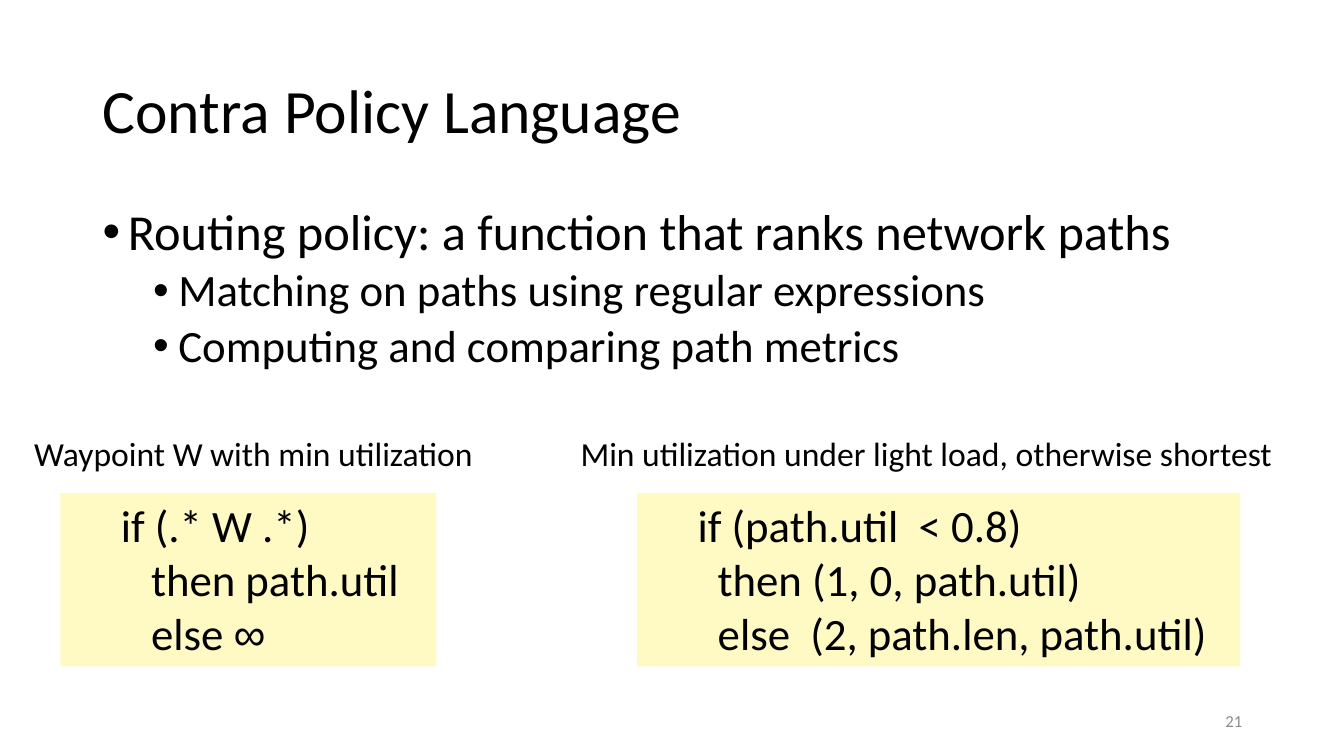
"""Build the slide on the Contra policy language with two example policies."""
from lxml import etree
from pptx import Presentation
from pptx.dml.color import RGBColor
from pptx.enum.shapes import MSO_SHAPE
from pptx.enum.text import MSO_ANCHOR, PP_ALIGN
from pptx.oxml.ns import qn
from pptx.util import Inches, Pt

RECTANGLE = MSO_SHAPE.RECTANGLE
TOP, MIDDLE = MSO_ANCHOR.TOP, MSO_ANCHOR.MIDDLE
LEFT, RIGHT = PP_ALIGN.LEFT, PP_ALIGN.RIGHT
BLACK = RGBColor(0x00, 0x00, 0x00)
GRAY = RGBColor(0x8C, 0x8C, 0x8C)
YELLOW = RGBColor(0xFF, 0xF9, 0xC4)

TITLE = "Contra Policy Language"
BULLETS = [
    (0, "Routing policy: a function that ranks network paths"),
    (1, "Matching on paths using regular expressions"),
    (1, "Computing and comparing path metrics"),
]
PAGE_NUMBER = "21"
POLICIES = [
    {
        "caption": "Waypoint W with min utilization",
        "caption_span": (0.24, 4.6),
        "code_span": (0.6, 3.73),
        "branch_indent": 0.3,
        "code": ["if (.* W .*)", "then path.util", "else ∞"],
    },
    {
        "caption": "Min utilization under light load, otherwise shortest",
        "caption_span": (5.66, 7.13),
        "code_span": (6.32, 5.98),
        "branch_indent": 0.2,
        "code": ["if (path.util  < 0.8)", "then (1, 0, path.util)",
                 "else  (2, path.len, path.util)"],
    },
]
CAPTION_TOP, CAPTION_HEIGHT = 4.25, 0.5
CODE_TOP, CODE_HEIGHT, CODE_INDENT = 4.89, 1.72, 0.5
BULLET_HANG, LEVEL_INDENT = 0.25, 0.5


def add_line(frame, text, size, color=BLACK, align=LEFT, indent=0, hang=0,
             spacing=1.0, before=0):
    """Append one formatted paragraph, with a bullet when it hangs."""
    first = frame.paragraphs[0]
    para = frame.add_paragraph() if first.runs else first
    para.alignment = align
    para.line_spacing = spacing
    para.space_before = Pt(before)
    properties = para._p.get_or_add_pPr()
    properties.set("marL", str(Inches(indent)))
    properties.set("indent", str(Inches(-hang)))
    if hang:
        etree.SubElement(properties, qn("a:buFont")).set("typeface", "Arial")
        etree.SubElement(properties, qn("a:buChar")).set("char", "•")
    before_sign, sign, after_sign = text.partition("∞")
    for part in filter(None, (before_sign, sign, after_sign)):
        span = para.add_run()
        span.text = part
        span.font.name = "Arial" if part == "∞" else "Calibri"
        span.font.size = Pt(size)
        span.font.color.rgb = color


def add_box(page, left, top, width, height, anchor=TOP, wrap=True, fill=None):
    """Add a text box, or a filled rectangle, and return its text frame."""
    place = [Inches(value) for value in (left, top, width, height)]
    if fill is None:
        box = page.shapes.add_textbox(*place)
    else:
        box = page.shapes.add_shape(RECTANGLE, *place)
        box.shadow.inherit = False
        box.fill.solid()
        box.fill.fore_color.rgb = fill
        box.line.fill.background()
    frame = box.text_frame
    frame.word_wrap = wrap
    frame.vertical_anchor = anchor
    return frame


def main():
    """Lay out the title, bullets, page number and policies."""
    deck = Presentation()
    deck.slide_width, deck.slide_height = Inches(13.33), Inches(7.5)
    page = deck.slides.add_slide(deck.slide_layouts[6])

    title = add_box(page, 0.92, 0.4, 11.5, 1.45, anchor=MIDDLE)
    add_line(title, TITLE, 44, spacing=0.9)

    body = add_box(page, 0.92, 2, 11.5, 4.76)
    for level, text in BULLETS:
        add_line(body, text, 32 if level else 36,
                 indent=BULLET_HANG + level * LEVEL_INDENT, hang=BULLET_HANG,
                 spacing=0.9, before=5 if level else 10)

    number = add_box(page, 9.42, 6.95, 3, 0.4, anchor=MIDDLE)
    add_line(number, PAGE_NUMBER, 12, color=GRAY, align=RIGHT)

    for policy in POLICIES:
        left, width = policy["code_span"]
        code = add_box(page, left, CODE_TOP, width, CODE_HEIGHT, fill=YELLOW)
        for row, text in enumerate(policy["code"]):
            branch = policy["branch_indent"] if row else 0
            add_line(code, text, 32, indent=CODE_INDENT + branch)
        left, width = policy["caption_span"]
        caption = add_box(page, left, CAPTION_TOP, width, CAPTION_HEIGHT, wrap=False)
        add_line(caption, policy["caption"], 24)

    deck.save("out.pptx")


if __name__ == "__main__":
    main()
